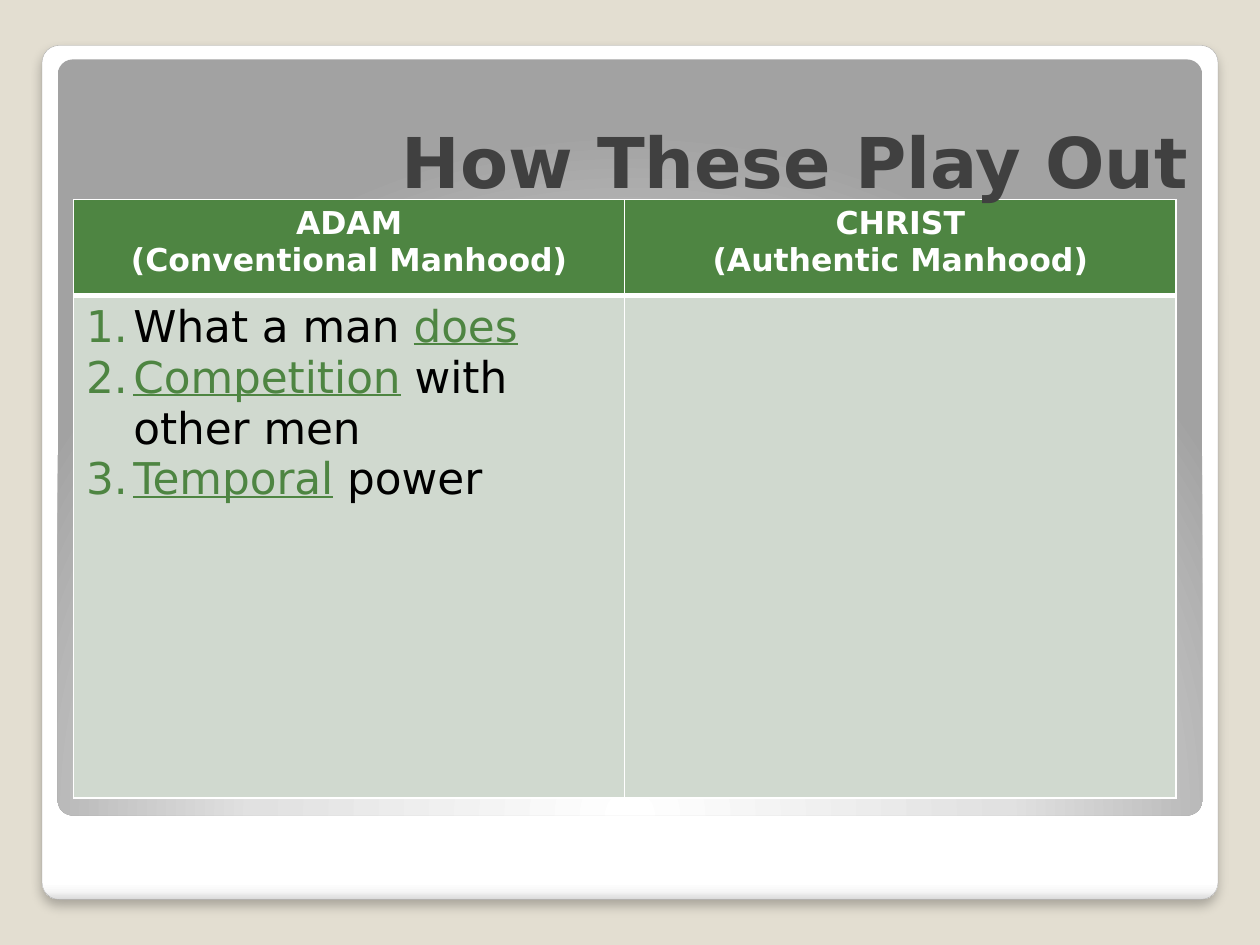
from dataclasses import dataclass

import lxml.etree
import pptx
import pptx.dml.color
import pptx.enum.shapes
import pptx.enum.text
import pptx.oxml.ns
import pptx.util

Pt = pptx.util.Pt
qn = pptx.oxml.ns.qn
ALIGN = pptx.enum.text.PP_ALIGN


@dataclass(frozen=True)
class Theme:
    font: str = "DejaVu Sans"
    background: str = "E3DED1"
    white: str = "FFFFFF"
    black: str = "000000"
    edge: str = "A4A4A4"
    title: str = "404040"
    accent: str = "4E8542"
    body_fill: str = "D0D9CF"
    title_size: int = 40
    header_size: int = 18
    body_size: int = 25


def rgb(value):
    return pptx.dml.color.RGBColor.from_string(value)


def add_xml(parent, tag, **attrs):
    """Append a DrawingML element with the given attributes."""
    attrs = {key: str(value) for key, value in attrs.items()}
    return lxml.etree.SubElement(parent, qn("a:" + tag), attrs)


def add_color(parent, value):
    return add_xml(parent, "srgbClr", val=value)


class SlideBuilder:
    def __init__(self, prs, theme):
        self.theme = theme
        self.s = prs.slides.add_slide(prs.slide_layouts[6])
        fill = self.s.background.fill
        fill.solid()
        fill.fore_color.rgb = rgb(theme.background)

    def run(self, p, text, size, color, bold=False, underline=False):
        r = p.add_run()
        r.text = text
        r.font.name = self.theme.font
        r.font.size = Pt(size)
        r.font.color.rgb = rgb(color)
        r.font.bold = bold
        r.font.underline = underline

    def panel(self, left, top, width, height, stops):
        """Rounded panel; returns it with its gradient element."""
        sp = self.s.shapes.add_shape(
            pptx.enum.shapes.MSO_SHAPE.ROUNDED_RECTANGLE,
            Pt(left), Pt(top), Pt(width), Pt(height))
        sp.adjustments[0] = 0.02
        sp.shadow.inherit = False
        sp.line.fill.background()
        sp.fill.gradient()
        grad = sp.element.spPr.find(qn("a:gradFill"))
        for child in list(grad):
            grad.remove(child)
        stop_list = add_xml(grad, "gsLst")
        for percent, color in stops:
            add_color(add_xml(stop_list, "gs", pos=percent * 1000), color)
        return sp, grad

    def linear_panel(self, *args):
        """Panel shaded downwards, with a thin edge and a soft shadow."""
        sp, grad = self.panel(*args)
        add_xml(grad, "lin", ang=5400000, scaled=0)
        sp.line.color.rgb = rgb(self.theme.edge)
        sp.line.width = Pt(0.16)
        effects = sp.element.spPr.find(qn("a:effectLst"))
        shadow = add_xml(effects, "outerShdw", blurRad=Pt(6), dist=Pt(4),
                         dir=5400000, algn="tl", rotWithShape=0)
        add_xml(add_color(shadow, self.theme.black), "alpha", val=25000)

    def radial_panel(self, *args):
        """Panel shaded outwards from a point below it."""
        sp, grad = self.panel(*args)
        circle = add_xml(grad, "path", path="circle")
        add_xml(circle, "fillToRect", l=50000, t=175000, r=50000, b=-75000)

    def title(self, text, left, top, width, height):
        tf = self.s.shapes.add_textbox(
            Pt(left), Pt(top), Pt(width), Pt(height)).text_frame
        tf.word_wrap = True
        tf.vertical_anchor = pptx.enum.text.MSO_ANCHOR.BOTTOM
        p = tf.paragraphs[0]
        p.alignment = ALIGN.RIGHT
        self.run(p, text, self.theme.title_size, self.theme.title, bold=True)

    def table(self, left, top, col_width, row_heights, headers, lists):
        t = self.theme
        tbl = self.s.shapes.add_table(
            len(row_heights), len(headers), Pt(left), Pt(top),
            Pt(col_width * len(headers)), Pt(sum(row_heights))).table
        tbl.horz_banding = False
        for col in tbl.columns:
            col.width = Pt(col_width)
        for row, height in zip(tbl.rows, row_heights):
            row.height = Pt(height)
        for i, (header, items) in enumerate(zip(headers, lists)):
            head, body = tbl.cell(0, i), tbl.cell(1, i)
            self.cell_style(head, t.accent, bottom=3)
            self.cell_style(body, t.body_fill, top=3)
            self.header_text(head.text_frame, header)
            self.numbered_list(body.text_frame, items)

    def cell_style(self, cell, color, top=1, bottom=1):
        tcPr = cell._tc.get_or_add_tcPr()
        for side, width in zip("LRTB", (1, 1, top, bottom)):
            ln = add_xml(tcPr, "ln" + side, w=Pt(width))
            add_color(add_xml(ln, "solidFill"), self.theme.white)
        cell.fill.solid()
        cell.fill.fore_color.rgb = rgb(color)

    def paragraphs(self, tf, items):
        for i, item in enumerate(items):
            yield (tf.add_paragraph() if i else tf.paragraphs[0]), item

    def header_text(self, tf, lines):
        for p, line in self.paragraphs(tf, lines):
            p.alignment = ALIGN.CENTER
            self.run(p, line, self.theme.header_size, self.theme.white, bold=True)

    def numbered_list(self, tf, items):
        """Each item is a list of (text, is_key_word) pairs."""
        t = self.theme
        for p, parts in self.paragraphs(tf, items):
            pPr = p._p.get_or_add_pPr()
            pPr.set("marL", str(Pt(27)))
            pPr.set("indent", str(-Pt(27)))
            add_color(add_xml(pPr, "buClr"), t.accent)
            add_xml(pPr, "buAutoNum", type="arabicPeriod")
            for text, key in parts:
                self.run(p, text, t.body_size, t.accent if key else t.black,
                         underline=key)


def main():
    prs = pptx.Presentation()
    prs.slide_width, prs.slide_height = Pt(720), Pt(540)
    slide = SlideBuilder(prs, Theme())

    # Framing panels
    slide.linear_panel(24, 26, 672, 488, [
        (0, "FFFFFF"), (98, "FFFFFF"), (99, "F7F7F7"), (100, "DADADA")])
    slide.radial_panel(33, 34, 654, 432, [
        (0, "FFFFFF"), (55, "E1E1E1"), (100, "A2A2A2")])

    # Comparison table
    slide.table(
        42, 114, 315, (55, 287),
        headers=[("ADAM", "(Conventional Manhood)"),
                 ("CHRIST", "(Authentic Manhood)")],
        lists=[[[("What a man ", False), ("does", True)],
                [("Competition", True), (" with other men", False)],
                [("Temporal", True), (" power", False)]],
               []])

    # Title
    slide.title("How These Play Out", 42, 36, 644, 83)

    prs.save("out.pptx")


if __name__ == "__main__":
    main()
